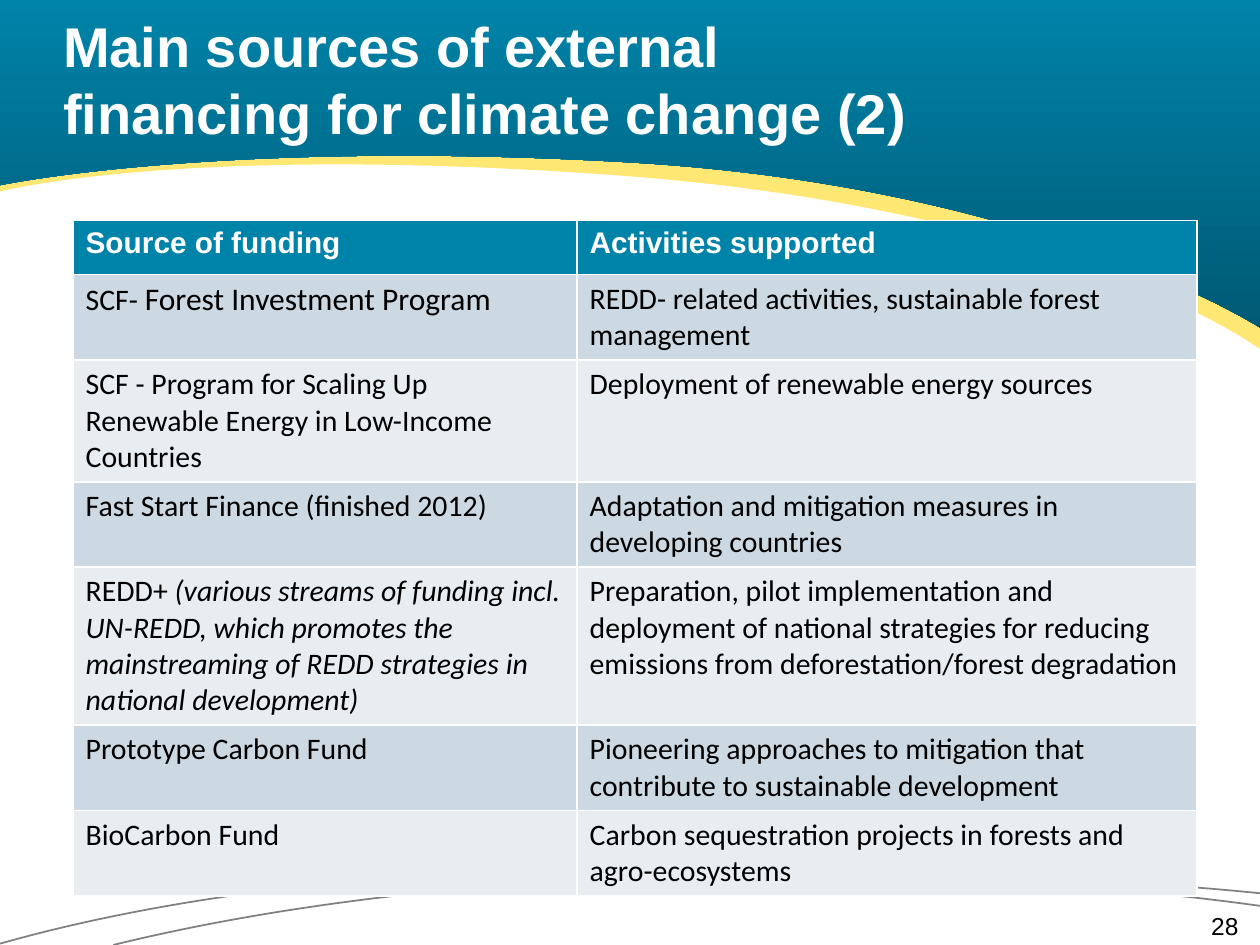
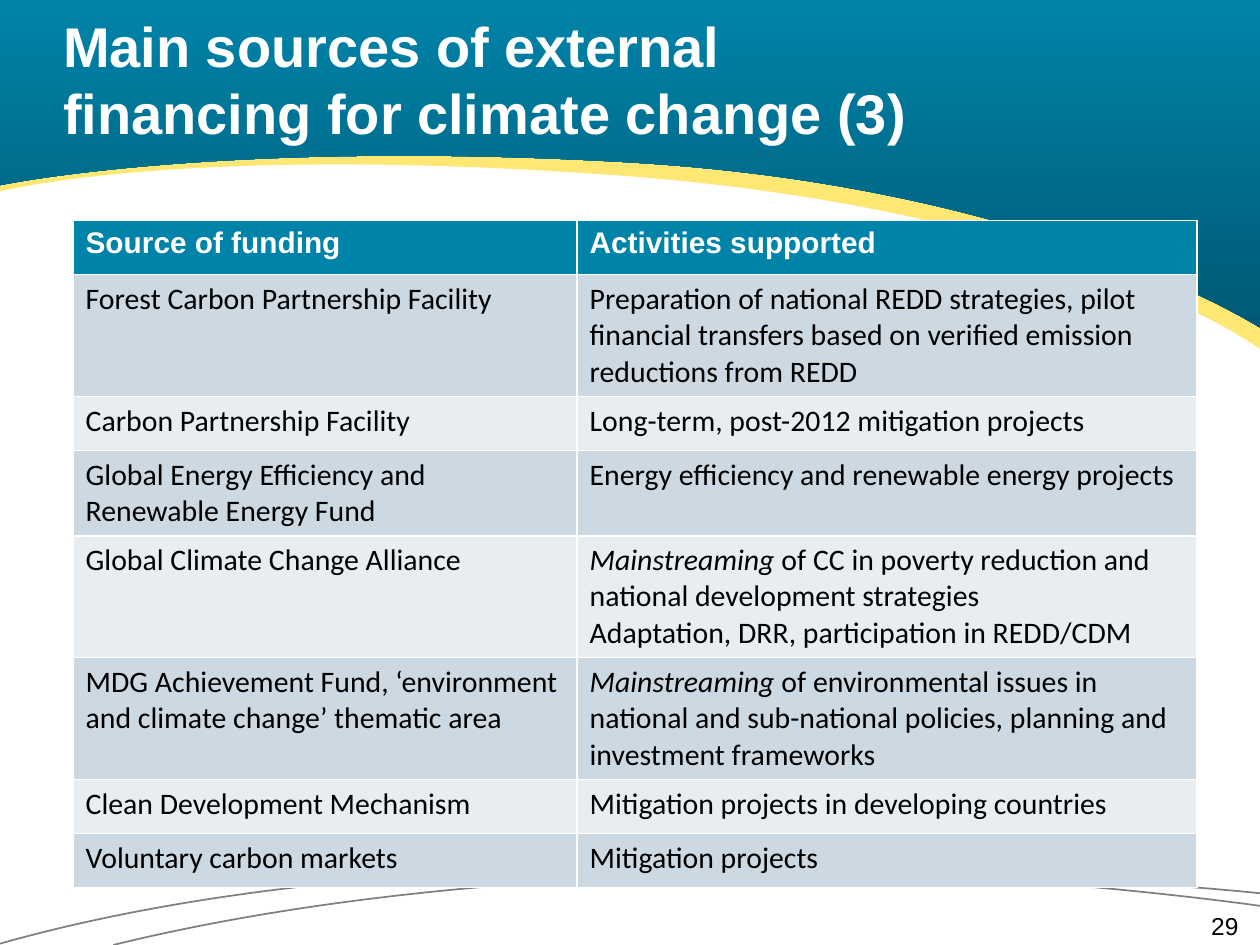
from lxml.etree import Element
from pptx import Presentation
from pptx.dml.color import RGBColor
from pptx.enum.text import MSO_ANCHOR, MSO_AUTO_SIZE, PP_ALIGN
from pptx.oxml.ns import qn
from pptx.util import Inches, Pt

BLUE, DEEP, YELLOW, GREY = "0083A9", "005A75", "FFE774", "7E8083"
DARK, LIGHT, WHITE, BLACK = "CCD9E2", "E7EDF1", "FFFFFF", "000000"

# Curves: a start point, then Bezier pieces of three points each
ARCS = [
    [(10, 7.09), (10, 7.09), (4.85, 6.53), (0.9, 7.5)],
    [(10, 7.19), (10, 7.19), (4.1, 6.33), (0, 7.49)],
]
TOP = [(0, -0.01)] * 3 + [(10, -0.01)] * 3
EDGE = [(10, 2.77), (10, 2.77), (8.54, 1.68), (5.01, 1.4),
        (1.47, 1.13), (0, 1.52), (0, 1.52)] + TOP
BAND = [(10, 2.6), (10, 2.6), (8.26, 1.48), (5.01, 1.29),
        (1.75, 1.1), (0, 1.47), (0, 1.47)] + TOP


def color(code):
    return RGBColor.from_string(code)


class Deck:
    def __init__(self):
        self.prs = Presentation()
        self.prs.slide_width, self.prs.slide_height = Inches(10), Inches(7.5)
        self.layout = self.prs.slide_layouts[5]
        self.slide = None

    def start(self):
        first = self.slide is None
        self.slide = self.prs.slides.add_slide(self.layout)
        if first:
            self.scene()

    def scene(self):
        """Draw the lines and bands that all slides share."""
        for arc in ARCS:
            line = self.curve(arc, False)
            line.fill.background()
            line.line.color.rgb = color(GREY)
            line.line.width = Pt(1)
        edge = self.curve(EDGE, True)
        edge.fill.solid()
        edge.fill.fore_color.rgb = color(YELLOW)
        band = self.curve(BAND, True)
        band.fill.gradient()
        band.fill.gradient_angle = 270
        for stop, code in zip(band.fill.gradient_stops, (BLUE, DEEP)):
            stop.color.rgb = color(code)
        for shape in (edge, band):
            shape.line.fill.background()

    def curve(self, points, close):
        """Build a Bezier outline and move it to the layout."""
        first, *rest = [(Inches(x), Inches(y)) for x, y in points]
        pen = self.slide.shapes.build_freeform(*first)
        pen.add_line_segments(rest, close=close)
        shape = pen.convert_to_shape()
        shape.shadow.inherit = False
        # Join each three line steps into one curve
        steps = list(shape.element.iter(qn("a:lnTo")))[:len(rest)]
        for k in range(0, len(steps), 3):
            bend = Element(qn("a:cubicBezTo"))
            steps[k].addprevious(bend)
            for step in steps[k:k + 3]:
                bend.append(step[0])
                step.getparent().remove(step)
        self.layout.element.find(".//" + qn("p:spTree")).append(shape.element)
        return shape

    def run(self, para, text, size, font="Arial", code=BLACK,
            bold=False, italic=False):
        run = para.add_run()
        run.text = text
        face = run.font
        face.size, face.name = Pt(size), font
        face.bold, face.italic = bold, italic
        face.color.rgb = color(code)

    def frame(self, shape, anchor):
        frame = shape.text_frame
        frame.word_wrap = True
        frame.auto_size = MSO_AUTO_SIZE.NONE
        frame.vertical_anchor = anchor
        frame.margin_left = frame.margin_right = 0
        frame.margin_top = frame.margin_bottom = 0
        return frame.paragraphs[0]

    def title(self, lines):
        box = self.slide.shapes.title
        box.left, box.top = Inches(0.5), Inches(0)
        box.width, box.height = Inches(9.33), Inches(1.25)
        para = self.frame(box, MSO_ANCHOR.MIDDLE)
        para.alignment = PP_ALIGN.LEFT
        for n, line in enumerate(lines):
            if n:
                para.add_line_break()
            self.run(para, line, 32, code=WHITE, bold=True)

    def number(self, text):
        box = self.slide.shapes.add_textbox(
            Inches(7.5), Inches(7.23), Inches(2.33), Inches(0.18))
        para = self.frame(box, MSO_ANCHOR.TOP)
        para.alignment = PP_ALIGN.RIGHT
        self.run(para, text, 14)

    def cell(self, cell, paras, fill, **style):
        """Fill a cell; a run is a text or a (text, style) pair."""
        cell.fill.solid()
        cell.fill.fore_color.rgb = color(fill)
        if isinstance(paras, str):
            paras = [[paras]]
        frame = cell.text_frame
        for n, runs in enumerate(paras):
            para = frame.add_paragraph() if n else frame.paragraphs[0]
            for run in runs:
                text, own = (run, {}) if isinstance(run, str) else run
                self.run(para, text, **{**style, **own})

    def table(self, rows):
        rows = [("Source of funding", "Activities supported")] + rows
        high = Inches(0.43)
        grid = self.slide.shapes.add_table(
            len(rows), 2, Inches(0.58), Inches(1.75), Inches(8.92),
            high * len(rows)).table
        for col, width in zip(grid.columns, (4, 4.92)):
            col.width = Inches(width)
        for r, row in enumerate(rows):
            grid.rows[r].height = high
            for c, paras in enumerate(row):
                cell = grid.cell(r, c)
                if r == 0:
                    self.cell(cell, paras, BLUE, size=17, code=WHITE,
                              bold=True)
                else:
                    self.cell(cell, paras, DARK if r % 2 else LIGHT,
                              size=17, font="Calibri")


ITALIC = {"italic": True}
MAIN = ("Mainstreaming", ITALIC)

# Each page: part, page number, table rows
PAGES = [
    (2, 28, [
        ([["SCF- ", ("Forest Investment Program", {"size": 18})]],
         "REDD- related activities, sustainable forest management"),
        ("SCF - Program for Scaling Up Renewable Energy in Low-Income "
         "Countries",
         "Deployment of renewable energy sources"),
        ("Fast Start Finance (finished 2012)",
         "Adaptation and mitigation measures in developing countries"),
        ([["REDD+ ", ("(various streams of funding incl. UN-REDD, which "
                      "promotes the mainstreaming of REDD strategies in "
                      "national development)", ITALIC)]],
         "Preparation, pilot implementation and deployment of national "
         "strategies for reducing emissions from deforestation/forest "
         "degradation"),
        ("Prototype Carbon Fund",
         "Pioneering approaches to mitigation that contribute to "
         "sustainable development"),
        ("BioCarbon Fund",
         "Carbon sequestration projects in forests and agro-ecosystems"),
    ]),
    (3, 29, [
        ("Forest Carbon Partnership Facility",
         "Preparation of national REDD strategies, pilot financial "
         "transfers based on verified emission reductions from REDD"),
        ("Carbon Partnership Facility",
         "Long-term, post-2012 mitigation projects"),
        ("Global Energy Efficiency and Renewable Energy Fund",
         "Energy efficiency and renewable energy projects"),
        ("Global Climate Change Alliance",
         [[MAIN, " of CC in poverty reduction and national development "
           "strategies"],
          ["Adaptation, DRR, participation in REDD/CDM"]]),
        ("MDG Achievement Fund, ‘environment and climate change’ "
         "thematic area",
         [[MAIN, " of environmental issues in national and sub-national "
           "policies, planning and investment frameworks"]]),
        ("Clean Development Mechanism",
         "Mitigation projects in developing countries"),
        ("Voluntary carbon markets", "Mitigation projects"),
    ]),
]


def main():
    deck = Deck()
    for part, page, rows in PAGES:
        deck.start()
        deck.title(["Main sources of external ",
                    f"financing for climate change ({part})"])
        deck.number(str(page))
        deck.table(rows)
    deck.prs.save("out.pptx")


if __name__ == "__main__":
    main()
